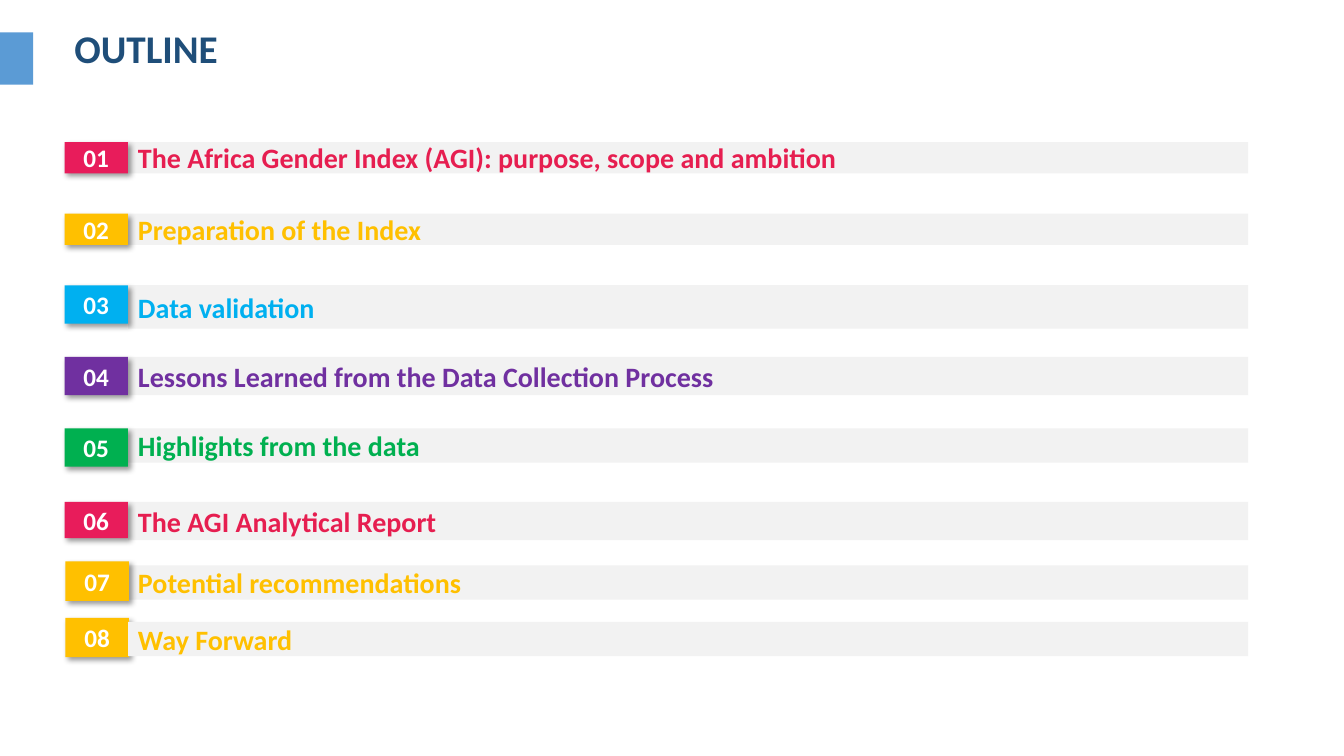
"""Build the outline slide: a title and eight numbered agenda bars."""
from dataclasses import dataclass

from lxml import etree
from pptx import Presentation
from pptx import util as u
from pptx.dml.color import RGBColor
from pptx.enum import shapes, text
from pptx.oxml import parse_xml


@dataclass(frozen=True)
class Theme:
    font: str = "Calibri"
    title_size: int = 28
    topic_size: int = 20
    number_size: int = 18
    navy: str = "1F4E79"
    blue: str = "5B9BD5"
    grey: str = "F2F2F2"
    white: str = "FFFFFF"
    crimson: str = "E61E50"
    pink: str = "E81C5B"
    gold: str = "FFC000"
    sky: str = "00B0F0"
    purple: str = "7030A0"
    green: str = "00B050"


theme = Theme()
SHADOW = """<a:effectLst xmlns:a="http://schemas.openxmlformats.org/drawingml/2006/main">
<a:outerShdw blurRad="50800" dist="38100" dir="2700000" algn="tl" rotWithShape="0">
<a:srgbClr val="000000"><a:alpha val="40000"/></a:srgbClr></a:outerShdw></a:effectLst>"""

deck = Presentation()
deck.slide_width, deck.slide_height = u.Inches(13.33), u.Inches(7.5)
page = deck.slides.add_slide(deck.slide_layouts[6])


def add_block(left, top, width, height, fill):
    block = page.shapes.add_shape(
        shapes.MSO_SHAPE.RECTANGLE, *map(u.Inches, (left, top, width, height)))
    block.shadow.inherit = False
    block.fill.solid()
    block.fill.fore_color.rgb = RGBColor.from_string(fill)
    block.line.fill.background()
    return block


def write(box, words, size, color, align=text.PP_ALIGN.LEFT, anchor=text.MSO_ANCHOR.MIDDLE):
    frame = box.text_frame
    frame.text = words
    frame.word_wrap = True
    frame.vertical_anchor = anchor
    para = frame.paragraphs[0]
    para.alignment = align
    font = para.runs[0].font
    font.name, font.size, font.bold = theme.font, u.Pt(size), True
    font.color.rgb = RGBColor.from_string(color)


add_block(0, 0.32, 0.33, 0.52, theme.blue)
title = page.shapes.add_textbox(*map(u.Inches, (0.64, 0.19, 10.72, 0.57)))
write(title, "OUTLINE", theme.title_size, theme.navy, anchor=text.MSO_ANCHOR.TOP)
title.text_frame.auto_size = text.MSO_AUTO_SIZE.SHAPE_TO_FIT_TEXT

topics = [
    ("The Africa Gender Index (AGI): purpose, scope and ambition",
     theme.crimson, theme.pink, 1.41, 0.31, 0.64, 1.41, 0.31),
    ("Preparation of the Index", theme.gold, theme.gold, 2.12, 0.31, 0.64, 2.12, 0.31),
    ("Data validation", theme.sky, theme.sky, 2.83, 0.43, 0.64, 2.83, 0.38),
    ("Lessons Learned from the Data Collection Process",
     theme.purple, theme.purple, 3.54, 0.38, 0.64, 3.54, 0.38),
    ("Highlights from the data", theme.green, theme.green, 4.25, 0.34, 0.64, 4.25, 0.38),
    ("The AGI Analytical Report", theme.crimson, theme.pink, 4.98, 0.38, 0.64, 4.98, 0.36),
    ("Potential recommendations", theme.gold, theme.gold, 5.61, 0.34, 0.65, 5.57, 0.39),
    ("Way Forward", theme.gold, theme.gold, 6.17, 0.34, 0.65, 6.13, 0.39),
]

for number, topic in enumerate(topics, 1):
    words, ink, fill, bar_top, bar_height, tag_left, tag_top, tag_height = topic
    bar = add_block(1.27, bar_top, 11.11, bar_height, theme.grey)
    write(bar, words, theme.topic_size, ink)

    tag = add_block(tag_left, tag_top, 0.63, tag_height, fill)
    write(tag, f"{number:02}", theme.number_size, theme.white, text.PP_ALIGN.CENTER)
    properties = tag.element.spPr
    etree.strip_elements(properties, "{*}effectLst")
    properties.append(parse_xml(SHADOW))

    if number == len(topics):
        tag.element.addnext(bar.element)

deck.save("out.pptx")
